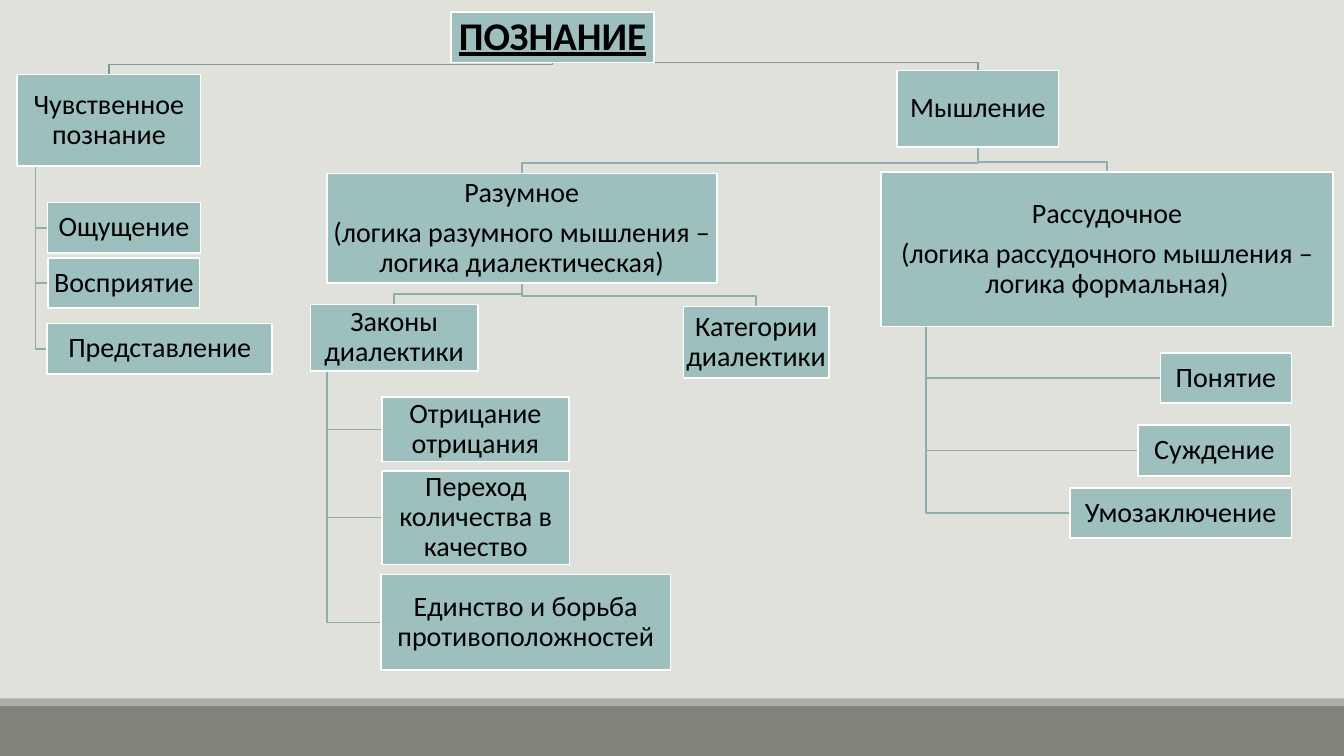
from collections.abc import Iterator
from dataclasses import dataclass

from pptx import Presentation
from pptx import util as u
from pptx.dml.color import RGBColor
from pptx.enum import shapes, text
from pptx.slide import Slide

PAPER = RGBColor(0xE1, 0xE1, 0xDB)
BAND = RGBColor(0x82, 0x84, 0x7C)
STRIPE = RGBColor(0xAC, 0xAD, 0xA8)
TEAL = RGBColor(0x9D, 0xBF, 0xBE)
DARK = RGBColor(0x7E, 0x99, 0x98)
MUTED = RGBColor(0x8E, 0xAD, 0xAC)
WHITE = RGBColor(0xFF, 0xFF, 0xFF)
BLACK = RGBColor(0, 0, 0)

WIDTH, HEIGHT = 13.33, 7.5
STROKE = u.Pt(1.25)
DROP = 0.1  # height of the last vertical piece above a child


@dataclass
class Node:
    """A box of the tree; hang puts its children on a rail at its left."""
    label: str
    left: float
    top: float
    width: float
    height: float = 0.5
    kids: tuple["Node", ...] = ()
    hang: bool = False
    root: bool = False

    @property
    def mid(self) -> float:
        return self.left + self.width / 2

    @property
    def base(self) -> float:
        return self.top + self.height


SENSES = Node("Чувственное познание", 0.17, 0.74, 1.82, 0.91, hang=True, kids=(
    Node("Ощущение", 0.47, 2.01, 1.52),
    Node("Восприятие", 0.48, 2.56, 1.5),
    Node("Представление", 0.47, 3.21, 2.23),
))
LAWS = Node("Законы диалектики", 3.08, 3.02, 1.66, 0.66, hang=True, kids=(
    Node("Отрицание отрицания", 3.79, 3.94, 1.85, 0.64),
    Node("Переход количества в качество", 3.79, 4.67, 1.86, 0.93),
    Node("Единство и борьба противоположностей", 3.78, 5.7, 2.87, 0.95),
))
REASON = Node(
    "Разумное\n(логика разумного мышления – логика диалектическая)",
    3.24, 1.72, 3.87, 1.09,
    kids=(LAWS, Node("Категории диалектики", 6.78, 3.04, 1.44, 0.71)),
)
LOGIC = Node(
    "Рассудочное\n(логика рассудочного мышления – логика формальная)",
    8.74, 1.71, 4.48, 1.53, hang=True,
    kids=(
        Node("Понятие", 11.51, 3.5, 1.3),
        Node("Суждение", 11.29, 4.22, 1.51),
        Node("Умозаключение", 10.61, 4.84, 2.2),
    ),
)
THOUGHT = Node("Мышление", 8.9, 0.7, 1.6, 0.76, kids=(REASON, LOGIC))
TREE = Node("ПОЗНАНИЕ", 4.47, 0.12, 2.02, kids=(SENSES, THOUGHT), root=True)


def walk(node: Node) -> Iterator[Node]:
    """Yield the node and everything below it."""
    yield node
    for kid in node.kids:
        yield from walk(kid)


def add_link(slide: Slide, node: Node, kid: Node) -> None:
    if node.hang:
        rail = node.left + node.width / 10
        side = kid.top + kid.height / 2
        points = [(rail, node.base), (rail, side), (kid.left, side)]
    else:
        turn = max(node.base, kid.top - DROP)
        points = [(node.mid, node.base), (node.mid, turn),
                  (kid.mid, turn), (kid.mid, kid.top)]
    start, *rest = [(u.Inches(x), u.Inches(y)) for x, y in points]
    pen = slide.shapes.build_freeform(*start)
    pen.add_line_segments(rest, close=False)
    link = pen.convert_to_shape()
    link.shadow.inherit = False
    link.fill.background()
    link.line.color.rgb = DARK if node.root else MUTED
    link.line.width = STROKE


def add_rect(slide: Slide, left: float, top: float, width: float,
             height: float, fill: RGBColor):
    rect = slide.shapes.add_shape(
        shapes.MSO_SHAPE.RECTANGLE,
        *map(u.Inches, (left, top, width, height)))
    rect.shadow.inherit = False
    rect.fill.solid()
    rect.fill.fore_color.rgb = fill
    rect.line.fill.background()
    return rect


def add_box(slide: Slide, node: Node) -> None:
    box = add_rect(slide, node.left, node.top, node.width, node.height, TEAL)
    box.line.color.rgb = WHITE
    box.line.width = STROKE
    size = 28 if node.root else 20
    frame = box.text_frame
    frame.word_wrap = True
    frame.vertical_anchor = text.MSO_ANCHOR.MIDDLE
    inset = u.Inches(0.02 if node.root else 0.01)
    frame.margin_left = frame.margin_right = inset
    frame.margin_top = frame.margin_bottom = inset
    frame.text = node.label
    for para in frame.paragraphs:
        para.alignment = text.PP_ALIGN.CENTER
        para.line_spacing = 0.9
        para.space_after = u.Pt(size * 0.35)
        for run in para.runs:
            run.font.name = "Calibri"
            run.font.size = u.Pt(size)
            run.font.color.rgb = BLACK
            run.font.bold = run.font.underline = node.root


def main() -> None:
    deck = Presentation()
    deck.slide_width = u.Inches(WIDTH)
    deck.slide_height = u.Inches(HEIGHT)
    slide = deck.slides.add_slide(deck.slide_layouts[6])
    slide.background.fill.solid()
    slide.background.fill.fore_color.rgb = PAPER

    add_rect(slide, 0, 7, WIDTH, 0.5, BAND)
    add_rect(slide, 0, 6.93, WIDTH, 0.07, STRIPE)
    for node in walk(TREE):
        for kid in node.kids:
            add_link(slide, node, kid)
    for node in walk(TREE):
        add_box(slide, node)
    deck.save("out.pptx")


if __name__ == "__main__":
    main()
